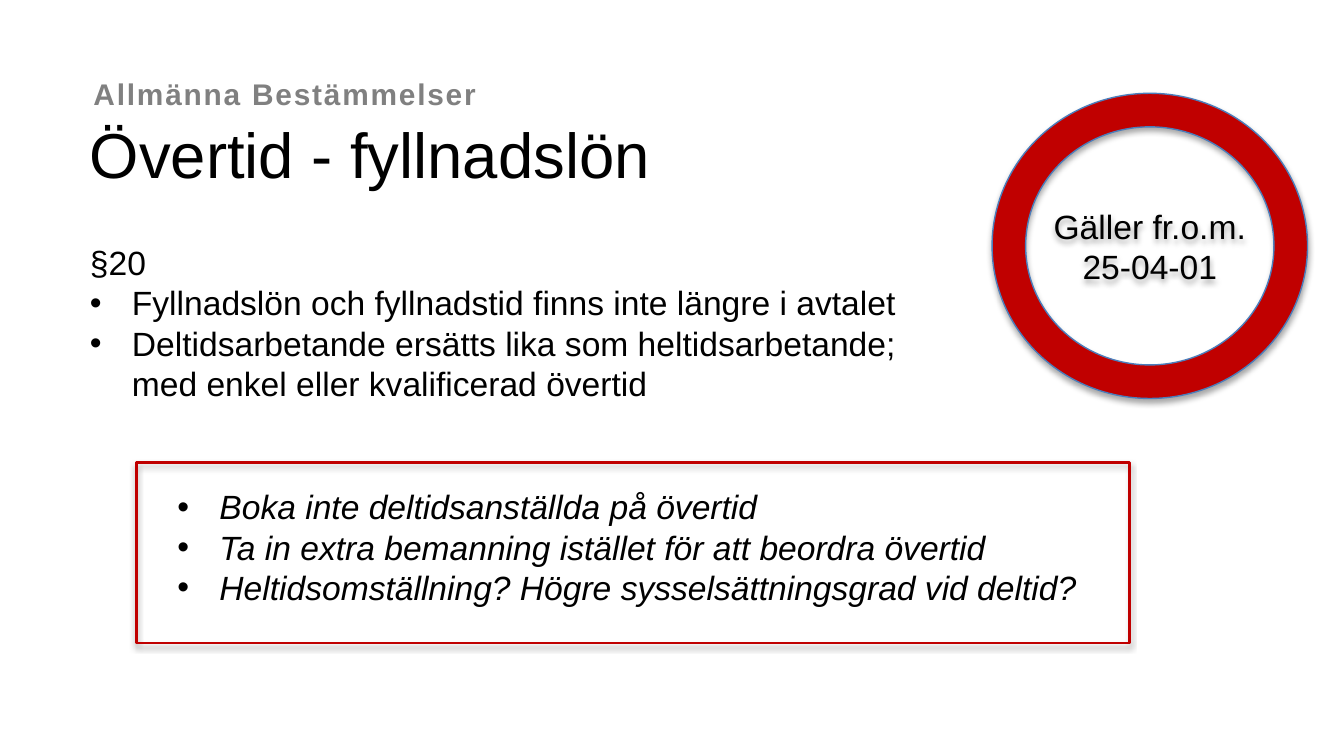
from lxml.etree import SubElement
from pptx import Presentation
from pptx.dml.color import RGBColor
from pptx.enum.shapes import MSO_SHAPE
from pptx.enum.text import MSO_ANCHOR, MSO_AUTO_SIZE, PP_ALIGN
from pptx.oxml.ns import qn
from pptx.util import Pt

BLACK = RGBColor(0x00, 0x00, 0x00)
GRAY = RGBColor(0x80, 0x80, 0x80)
RED = RGBColor(0xC0, 0x00, 0x00)
BLUE = RGBColor(0x4B, 0x7E, 0xBC)


class SlideBuilder:
    font_name = "Arial"
    text_size = 18
    bullet_indent = 22.5

    def __init__(self, slide):
        self.slide = slide

    def place(self, shape, left, top, width, height):
        shape.left, shape.top = Pt(left), Pt(top)
        shape.width, shape.height = Pt(width), Pt(height)

    def prepare(self, frame, anchor=MSO_ANCHOR.TOP):
        frame.word_wrap = True
        frame.auto_size = MSO_AUTO_SIZE.NONE
        frame.vertical_anchor = anchor
        return frame

    def text_box(self, *box):
        shape = self.slide.shapes.add_textbox(*map(Pt, box))
        return self.prepare(shape.text_frame)

    def placeholder(self, shape, *box):
        self.place(shape, *box)
        return self.prepare(shape.text_frame)

    def add_text(self, paragraph, text, size=text_size, color=BLACK,
                 bold=False, italic=False, align=PP_ALIGN.LEFT, spacing=0):
        paragraph.alignment = align
        paragraph.space_before = Pt(0)
        run = paragraph.add_run()
        run.text = text
        font = run.font
        font.name, font.size = self.font_name, Pt(size)
        font.bold, font.italic = bold, italic
        font.color.rgb = color
        if spacing:
            font._element.set("spc", str(spacing * 100))

    def bullet(self, paragraph, text, **style):
        properties = paragraph._p.get_or_add_pPr()
        properties.set("marL", str(Pt(self.bullet_indent)))
        properties.set("indent", str(-Pt(self.bullet_indent)))
        SubElement(properties, qn("a:buFont"), typeface=self.font_name)
        SubElement(properties, qn("a:buChar"), char="•")
        self.add_text(paragraph, text, **style)

    def plain(self, paragraph, text, **style):
        properties = paragraph._p.get_or_add_pPr()
        properties.set("marL", "0")
        properties.set("indent", "0")
        SubElement(properties, qn("a:buNone"))
        self.add_text(paragraph, text, **style)

    def bullets(self, frame, items, **style):
        for item in items:
            first = not frame.paragraphs[0].runs
            paragraph = frame.paragraphs[0] if first else frame.add_paragraph()
            self.bullet(paragraph, item, **style)

    def outlined(self, kind, line_color, line_width, *box):
        # The theme's soft shadow is kept on purpose
        shape = self.slide.shapes.add_shape(kind, *map(Pt, box))
        shape.line.color.rgb = line_color
        shape.line.width = Pt(line_width)
        return shape


def main():
    presentation = Presentation()
    presentation.slide_width, presentation.slide_height = Pt(720), Pt(405)
    slide = presentation.slides.add_slide(presentation.slide_layouts[1])
    builder = SlideBuilder(slide)

    # Heading
    heading = builder.placeholder(slide.shapes.title, 41, 58, 508, 46)
    builder.add_text(heading.paragraphs[0], "Övertid - fyllnadslön", size=34)
    section = builder.text_box(43, 37, 506, 20)
    builder.add_text(section.paragraphs[0], "Allmänna Bestämmelser", size=16,
                     color=GRAY, bold=True, spacing=1)

    # Agreement rules
    rules = builder.placeholder(slide.placeholders[1], 41, 126, 478, 117)
    builder.plain(rules.paragraphs[0], "§20")
    builder.bullets(rules, [
        "Fyllnadslön och fyllnadstid finns inte längre i avtalet",
        "Deltidsarbetande ersätts lika som heltidsarbetande; "
        "med enkel eller kvalificerad övertid",
    ])

    # Framed advice
    frame = builder.outlined(MSO_SHAPE.RECTANGLE, RED, 1.5, 73, 248, 532, 96.5)
    frame.fill.background()
    advice = builder.text_box(88, 257, 528, 73)
    builder.bullets(advice, [
        "Boka inte deltidsanställda på övertid",
        "Ta in extra bemanning istället för att beordra övertid",
        "Heltidsomställning? Högre sysselsättningsgrad vid deltid?",
    ], italic=True)

    # Start date ring
    ring = builder.outlined(MSO_SHAPE.DONUT, BLUE, 0.75, 531.5, 50, 169, 163.5)
    ring.adjustments[0] = 0.11
    ring.fill.solid()
    ring.fill.fore_color.rgb = RED
    start_date = builder.prepare(ring.text_frame, MSO_ANCHOR.MIDDLE)
    builder.add_text(start_date.paragraphs[0], "Gäller fr.o.m. 25-04-01",
                     align=PP_ALIGN.CENTER)

    presentation.save("out.pptx")


if __name__ == "__main__":
    main()
